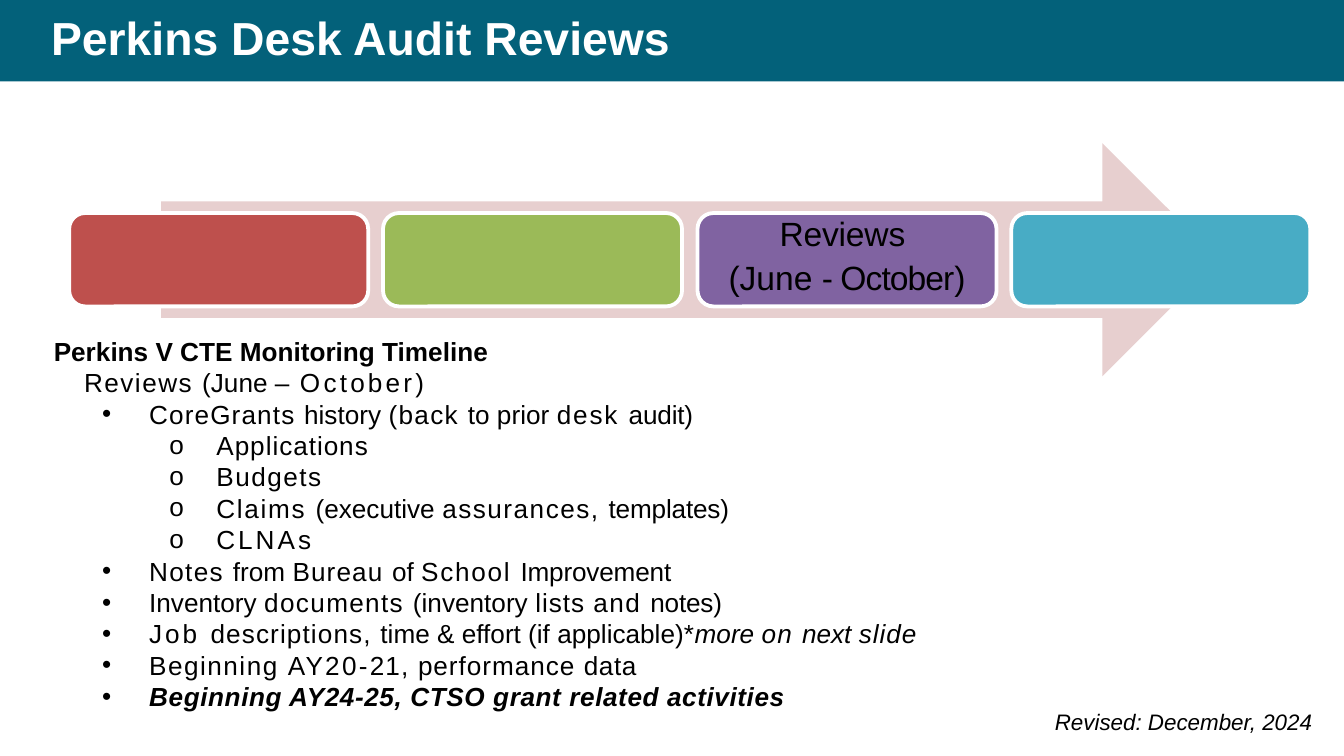
from dataclasses import dataclass

from lxml.etree import SubElement
from pptx import Presentation
from pptx.dml.color import RGBColor
from pptx.enum.shapes import MSO_SHAPE
from pptx.enum.text import MSO_ANCHOR, MSO_AUTO_SIZE, PP_ALIGN
from pptx.oxml.ns import qn
from pptx.util import Pt

SCALE = 4572  # EMU per px, 200 px to the inch


@dataclass(frozen=True)
class Theme:
    font: str = "Arial"
    banner: str = "03617A"
    arrow: str = "E7CFCF"
    cards: tuple = ("BE504D", "9BBA58", "8063A1", "48ACC5")
    ink: str = "000000"
    white: str = "FFFFFF"
    title: float = 24.8
    card: float = 18
    body: float = 14
    note: float = 12


THEME = Theme()

# List style: bullet, left margin and hanging indent in px
STYLES = {
    "head": (None, 30, 0),
    "sub": (None, 75, 0),
    "item": ("•", 172, -70),
    "point": ("o", 272, -70),
}

# Each line: style, then runs of text, letter spacing and optional format
LINES = [
    ("head", ("Perkins V CTE Monitoring Timeline", 0, {"bold": True})),
    ("sub", ("Reviews ", 0.8), ("(June –", 0), (" October", 1.7), (")", -0.2)),
    ("item", ("CoreGrants ", 0.6), ("history ", 0), ("(back ", 0.7),
     ("to prior ", 0), ("desk ", 1), ("audit)", -0.1)),
    ("point", ("Applications", 0.5)),
    ("point", ("Budgets", 0.8)),
    ("point", ("Claims ", 0.9), ("(executive ", 0), ("assurances, ", 0.8),
     ("templates)", -0.1)),
    ("point", ("CLNAs", 1.6)),
    ("item", ("Notes ", 0.7), ("from ", 0), ("Bureau ", 0.6), ("of ", 0),
     ("School ", 0.9), ("Improvement", -0.1)),
    ("item", ("Inventory ", 0), ("documents ", 0.7), ("(inventory ", 0),
     ("lists ", 0.5), ("and ", 0.8), ("notes)", -0.1)),
    ("item", ("Job ", 1.6), ("descriptions, ", 0.6),
     ("time & effort (if applicable)*", 0), ("more ", 0, {"italic": True}),
     ("on ", 0.7, {"italic": True}), ("next ", 0, {"italic": True}),
     ("slide", 0.5, {"italic": True})),
    ("item", ("Beginning ", 0.8), ("AY20-", 1.2), ("21, ", 0.6),
     ("performance ", 0.5), ("data", 0.3)),
    ("item", ("Beginning AY24-25, CTSO grant related activities", 0.3,
              {"bold": True, "italic": True})),
]


def px(num):
    return num * SCALE


def write(para, text, size=THEME.body, color=THEME.ink, bold=False,
          italic=False, gap=0):
    """Add one run of formatted text to a paragraph."""
    run = para.add_run()
    run.text = text
    font = run.font
    font.name, font.size = THEME.font, Pt(size)
    font.bold, font.italic = bold, italic
    font.color.rgb = RGBColor.from_string(color)
    if gap:
        run._r.get_or_add_rPr().set("spc", str(round(gap * 100)))


def place(shape, left, top, width, height):
    """Move a placeholder and bring it to the front."""
    shape.left, shape.top = px(left), px(top)
    shape.width, shape.height = px(width), px(height)
    shape.element.getparent().append(shape.element)


def block(slide, kind, box, fill, edge=None):
    """Add a filled preset shape, with an optional outline."""
    shape = slide.shapes.add_shape(kind, *map(px, box))
    shape.shadow.inherit = False
    shape.fill.solid()
    shape.fill.fore_color.rgb = RGBColor.from_string(fill)
    if edge:
        shape.line.color.rgb = RGBColor.from_string(edge)
        shape.line.width = Pt(2.04)
    else:
        shape.line.fill.background()
    return shape


def lead(para, points, before=0):
    """Set the line pitch and the space above."""
    para.line_spacing = Pt(points)
    para.space_before = Pt(before)
    para.space_after = Pt(0)


def mark(para, style):
    """Set the indent and bullet of a list line."""
    sign, left, hang = STYLES[style]
    props = para._p.get_or_add_pPr()
    props.set("marL", str(px(left)))
    props.set("indent", str(px(hang)))
    if sign:
        SubElement(props, qn("a:buFont")).set("typeface", THEME.font)
        SubElement(props, qn("a:buChar")).set("char", sign)
    else:
        SubElement(props, qn("a:buNone"))


def head(slide):
    block(slide, MSO_SHAPE.RECTANGLE, (0, 0, 2000, 121), THEME.banner)
    title = slide.shapes.title
    place(title, 56, 0, 1848, 121)
    frame = title.text_frame
    frame.auto_size = MSO_AUTO_SIZE.NONE
    frame.vertical_anchor = MSO_ANCHOR.MIDDLE
    para = frame.paragraphs[0]
    para.alignment = PP_ALIGN.LEFT
    para.line_spacing = 0.9
    write(para, "Perkins Desk Audit Reviews", size=THEME.title,
          color=THEME.white, bold=True)


def flow(slide):
    block(slide, MSO_SHAPE.RIGHT_ARROW, (240, 213, 1574, 347), THEME.arrow)
    cards = []
    for col, fill in enumerate(THEME.cards):
        card = block(slide, MSO_SHAPE.ROUNDED_RECTANGLE,
                     (103, 317, 445, 139), fill, THEME.white)
        card.left += px(467 * col + col // 2)
        card.adjustments[0] = 0.17
        cards.append(card)

    # Label of the current stage
    frame = cards[2].text_frame
    frame.word_wrap = True
    frame.vertical_anchor = MSO_ANCHOR.MIDDLE
    frame.margin_top, frame.margin_bottom = px(6), px(16)
    first, second = frame.paragraphs[0], frame.add_paragraph()
    for para, before in ((first, 0), (second, 3.6)):
        para.alignment = PP_ALIGN.CENTER
        lead(para, 20, before)
    write(first, "Reviews ", size=THEME.card, gap=-0.1)
    for text, gap in (("(June ", 0), ("- October", -0.5), (")", -0.2)):
        write(second, text, size=THEME.card, gap=gap)


def listing(slide):
    body = slide.placeholders[1]
    place(body, 50, 497, 1940, 568)
    frame = body.text_frame
    frame.auto_size = MSO_AUTO_SIZE.NONE
    frame.margin_left = frame.margin_right = frame.margin_bottom = 0
    frame.margin_top = px(2)
    for row, (style, *runs) in enumerate(LINES):
        para = frame.add_paragraph() if row else frame.paragraphs[0]
        lead(para, 16.8)
        mark(para, style)
        for text, gap, *form in runs:
            write(para, text, gap=gap, **(form[0] if form else {}))


def note(slide):
    box = map(px, (1550, 1044, 450, 60))
    frame = slide.shapes.add_textbox(*box).text_frame
    frame.word_wrap = True
    write(frame.paragraphs[0], "Revised: December, 2024", size=THEME.note,
          italic=True)


def main():
    deck = Presentation()
    deck.slide_width, deck.slide_height = px(2000), px(1125)
    slide = deck.slides.add_slide(deck.slide_layouts[1])
    head(slide)
    flow(slide)
    listing(slide)
    note(slide)
    deck.save("out.pptx")


if __name__ == "__main__":
    main()
